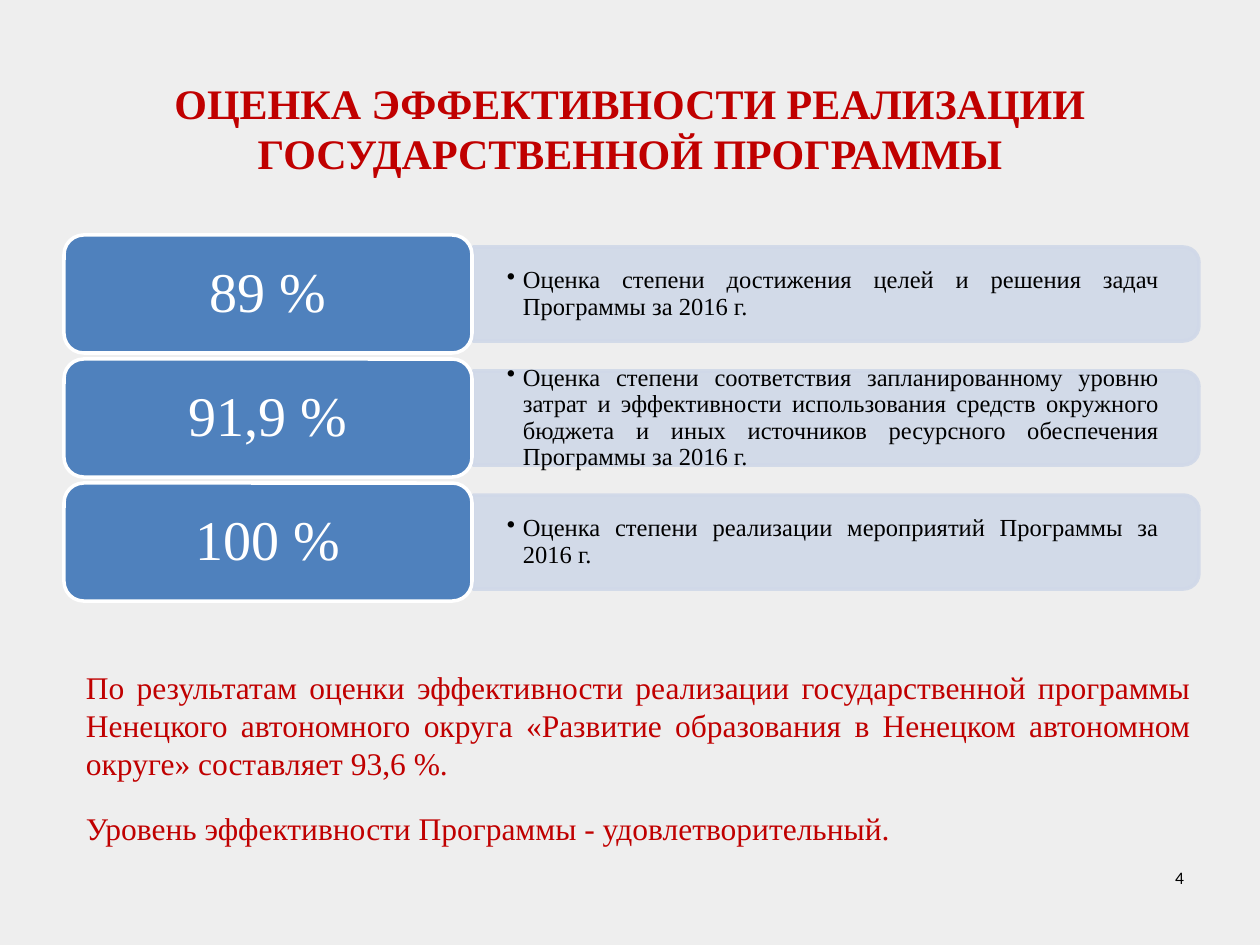
"""Build the slide that rates how effectively the state programme was carried out."""
from dataclasses import dataclass

from lxml.etree import SubElement
from pptx import Presentation
from pptx.dml.color import RGBColor
from pptx.enum.shapes import MSO_SHAPE as Shape
from pptx.enum.text import MSO_ANCHOR as Anchor, PP_ALIGN as Align
from pptx.oxml.ns import qn
from pptx.util import Pt

EMU_PER_PX = 914400 / 126
BACKGROUND = RGBColor(0xEE, 0xEE, 0xEE)
RED = RGBColor(0xC0, 0x00, 0x00)
BLUE = RGBColor(0x4F, 0x81, 0xBD)
PALE_BLUE = RGBColor(0xD0, 0xD8, 0xE8)
WHITE = RGBColor(0xFF, 0xFF, 0xFF)
BLACK = RGBColor(0x00, 0x00, 0x00)
SERIF = "Times New Roman"
ROW_PITCH = 124
FIRST_ROW_MIDDLE = 294


@dataclass(frozen=True)
class Box:
    left: int
    top: int
    width: int
    height: int


@dataclass(frozen=True)
class Rating:
    value: str
    criterion: str


@dataclass(frozen=True)
class Style:
    size: int
    color: RGBColor
    align: Align = Align.LEFT
    anchor: Anchor = Anchor.TOP
    name: str = SERIF
    bold: bool = False
    line_spacing: float = 1.0
    inset_x: int = 13
    inset_y: int = 6
    bullet_indent: int = 0


@dataclass(frozen=True)
class Note:
    text: str
    box: Box
    style: Style


VALUE = Style(32, WHITE, Align.CENTER, Anchor.MIDDLE, line_spacing=0.9, inset_x=22, inset_y=14)
CRITERION = Style(14, BLACK, Align.JUSTIFY, Anchor.MIDDLE, line_spacing=0.9,
                  inset_x=34, inset_y=18, bullet_indent=16)

RATINGS = (
    Rating("89 %", "Оценка степени достижения целей и решения задач Программы за 2016 г."),
    Rating("91,9 %", "Оценка степени соответствия запланированному уровню затрат и эффективности "
           "использования средств окружного бюджета и иных источников ресурсного обеспечения "
           "Программы за 2016 г."),
    Rating("100 %", "Оценка степени реализации мероприятий Программы за 2016 г."),
)

NOTES = (
    Note("ОЦЕНКА ЭФФЕКТИВНОСТИ РЕАЛИЗАЦИИ ГОСУДАРСТВЕННОЙ ПРОГРАММЫ", Box(63, 49, 1134, 135),
         Style(24, RED, Align.CENTER, Anchor.BOTTOM, bold=True)),
    Note("4", Box(903, 861, 294, 66), Style(10, BLACK, Align.RIGHT, name="Calibri")),
    Note("По результатам оценки эффективности реализации государственной программы Ненецкого "
         "автономного округа «Развитие образования в Ненецком автономном округе» "
         "составляет 93,6 %.", Box(73, 662, 1131, 127), Style(18, RED, Align.JUSTIFY)),
    Note("Уровень эффективности Программы - удовлетворительный.", Box(73, 803, 1111, 50),
         Style(18, RED)),
)


def px(length: int) -> int:
    """Turn pixels into EMU."""
    return round(length * EMU_PER_PX)


def place(box: Box) -> tuple:
    """Give the position and size of a box in EMU."""
    return tuple(map(px, (box.left, box.top, box.width, box.height)))


def set_all(target, values: dict) -> None:
    """Set each named attribute on the target."""
    for key, value in values.items():
        setattr(target, key, value)


def write(shape, text: str, style: Style) -> None:
    """Write one styled paragraph into a shape."""
    frame = shape.text_frame
    set_all(frame, {
        "word_wrap": True, "vertical_anchor": style.anchor,
        "margin_left": px(style.inset_x), "margin_right": px(style.inset_x),
        "margin_top": px(style.inset_y), "margin_bottom": px(style.inset_y),
    })
    para = frame.paragraphs[0]
    if style.bullet_indent:
        properties = para._p.get_or_add_pPr()
        properties.set("marL", str(px(style.bullet_indent)))
        properties.set("indent", str(-px(style.bullet_indent)))
        SubElement(properties, qn("a:buChar")).set("char", "•")
    set_all(para, {"alignment": style.align, "line_spacing": style.line_spacing})
    span = para.add_run()
    span.text = text
    set_all(span.font, {"size": Pt(style.size), "name": style.name, "bold": style.bold})
    span.font.color.rgb = style.color


def add_text(slide, note: Note) -> None:
    """Add a text box."""
    write(slide.shapes.add_textbox(*place(note.box)), note.text, note.style)


def add_panel(slide, kind: Shape, box: Box, fill: RGBColor, line: RGBColor):
    """Add a filled and outlined shape without a shadow."""
    shape = slide.shapes.add_shape(kind, *place(box))
    shape.shadow.inherit = False
    shape.fill.solid()
    shape.fill.fore_color.rgb = fill
    shape.line.color.rgb = line
    shape.line.width = Pt(2)
    return shape


def add_rating(slide, rating: Rating, middle: int) -> None:
    """Add one row: a criterion strip and its value tile."""
    strip = add_panel(slide, Shape.ROUND_2_SAME_RECTANGLE,
                      Box(789, middle - 363, 94, 726), PALE_BLUE, PALE_BLUE)
    strip.rotation = 90
    for color in strip._element.spPr.iter(qn("a:srgbClr")):
        SubElement(color, qn("a:alpha")).set("val", "90000")
    add_text(slide, Note(rating.criterion, Box(473, middle - 43, 720, 86), CRITERION))
    tile = add_panel(slide, Shape.ROUNDED_RECTANGLE,
                     Box(64, middle - 59, 408, 118), BLUE, WHITE)
    write(tile, rating.value, VALUE)


def main() -> None:
    """Build and save the deck."""
    deck = Presentation()
    set_all(deck, {"slide_width": px(1260), "slide_height": px(945)})
    slide = deck.slides.add_slide(deck.slide_layouts[6])
    slide.background.fill.solid()
    slide.background.fill.fore_color.rgb = BACKGROUND
    for row, rating in enumerate(RATINGS):
        add_rating(slide, rating, FIRST_ROW_MIDDLE + row * ROW_PITCH)
    for note in NOTES:
        add_text(slide, note)
    deck.save("out.pptx")


if __name__ == "__main__":
    main()
